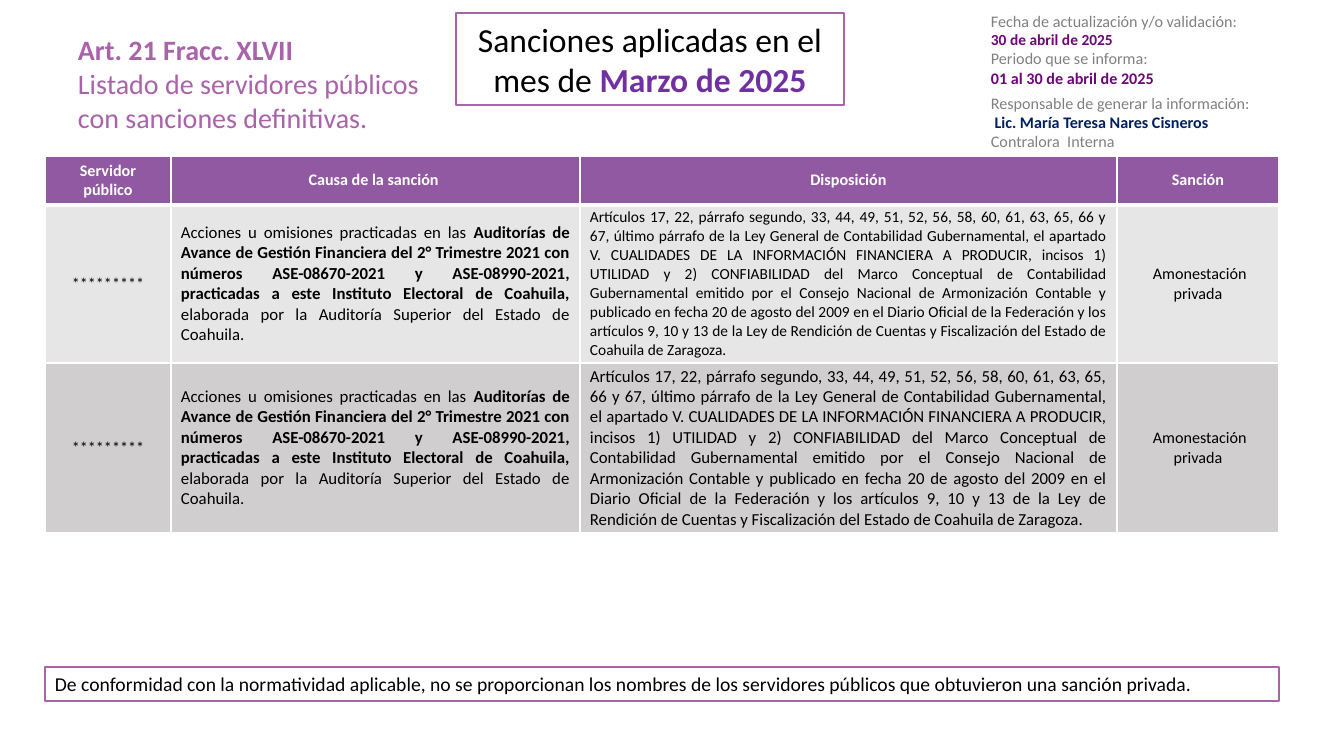
from dataclasses import dataclass
from typing import Any, NamedTuple

from lxml import etree
from pptx import Presentation
from pptx.dml.color import RGBColor
from pptx.enum.shapes import MSO_SHAPE
from pptx.enum.text import MSO_ANCHOR, MSO_AUTO_SIZE, PP_ALIGN
from pptx.oxml.ns import qn
from pptx.util import Emu, Pt

LEFT, CENTER, JUSTIFY = PP_ALIGN.LEFT, PP_ALIGN.CENTER, PP_ALIGN.JUSTIFY
TOP, MIDDLE = MSO_ANCHOR.TOP, MSO_ANCHOR.MIDDLE
RECT = MSO_SHAPE.RECTANGLE
FIXED = MSO_AUTO_SIZE.NONE

WIDE, HIGH = 1344, 756
SCALE = 12192000 / WIDE
FONT = "Calibri"
WHITE, BLACK, GRAY = "FFFFFF", "000000", "808080"
MAUVE, PURPLE, PLUM, NAVY = "A963A9", "7030A0", "6F0579", "002060"
HEAD, LIGHT, DARK = "9059A1", "E7E6E6", "D0CECE"


class Run(NamedTuple):
    text: str
    color: str = BLACK
    bold: bool = False


@dataclass
class Para:
    runs: list[Run]
    size: float
    align: PP_ALIGN = LEFT


@dataclass
class Box:
    left: int
    top: int
    width: int
    height: int
    paras: list[Para]


def px(num: int) -> Emu:
    return Emu(round(num * SCALE))


def rgb(code: str) -> RGBColor:
    return RGBColor.from_string(code)


def write(frame: Any, paras: list[Para]) -> None:
    for i, item in enumerate(paras):
        para = frame.add_paragraph() if i else frame.paragraphs[0]
        para.alignment = item.align
        para.font.name, para.font.size = FONT, Pt(item.size)
        for part in item.runs:
            run = para.add_run()
            run.text = part.text
            font = run.font
            font.name, font.size, font.bold = FONT, Pt(item.size), part.bold
            font.color.rgb = rgb(part.color)


def fill_box(shape: Any, box: Box, anchor: MSO_ANCHOR) -> None:
    frame = shape.text_frame
    frame.word_wrap = True
    frame.auto_size = FIXED
    frame.vertical_anchor = anchor
    write(frame, box.paras)


def spot(box: Box) -> list[Emu]:
    return [px(n) for n in (box.left, box.top, box.width, box.height)]


def frame_box(shape: Any) -> None:
    """Give a shape the white fill and mauve outline."""
    shape.fill.solid()
    shape.fill.fore_color.rgb = rgb(WHITE)
    shape.line.color.rgb = rgb(MAUVE)
    shape.line.width = Pt(1)


def edge(cell: Any, side: str, width: int) -> None:
    line = etree.SubElement(cell._tc.get_or_add_tcPr(), qn(f"a:ln{side}"), w=str(Pt(width)))
    solid = etree.SubElement(line, qn("a:solidFill"))
    etree.SubElement(solid, qn("a:srgbClr"), val=WHITE)


def fill_cell(cell: Any, para: Para, color: str, top: int, base: int) -> None:
    """Write a cell; top and base are its border widths in points."""
    for side, width in (("L", 1), ("R", 1), ("T", top), ("B", base)):
        edge(cell, side, width)
    cell.fill.solid()
    cell.fill.fore_color.rgb = rgb(color)
    cell.vertical_anchor = MIDDLE
    cell.margin_left = cell.margin_right = px(10)
    cell.margin_top = cell.margin_bottom = px(2)
    write(cell.text_frame, [para])


TITLE = Box(456, 13, 388, 92, [
    Para([Run("Sanciones aplicadas en el mes de "), Run("Marzo de 2025", PURPLE, True)], 24, CENTER),
])
NOTE = Box(45, 667, 1234, 34, [
    Para([Run("De conformidad con la normatividad aplicable, no se proporcionan los nombres "
              "de los servidores públicos que obtuvieron una sanción privada.")], 14),
])
TEXTS = [
    Box(68, 28, 388, 146, [
        Para([Run("Art. 21 Fracc. XLVII", MAUVE, True)], 20),
        Para([Run("Listado de servidores públicos con sanciones definitivas.", MAUVE)], 20),
    ]),
    Box(981, 6, 273, 107, [
        Para([Run("Fecha de actualización y/o validación:", GRAY)], 11.5),
        Para([Run("30 de abril de 2025", PLUM, True)], 11),
        Para([Run("Periodo que se informa:", GRAY)], 11.5),
        Para([Run("01 al 30 de abril de 2025", PLUM, True)], 11.5),
    ]),
    Box(981, 88, 298, 68, [
        Para([Run("Responsable de generar la información:", GRAY)], 11.5),
        Para([Run(" Lic. María Teresa Nares Cisneros", NAVY, True)], 11.5),
        Para([Run("Contralora  Interna", GRAY)], 11.5),
    ]),
]

COLS = [126, 409, 537, 162]
ROWS = [49, 158, 170]
HEADS = ["Servidor público", "Causa de la sanción ", "Disposición", "Sanción"]
CAUSE = [
    Run("Acciones u omisiones practicadas en las "),
    Run("Auditorías de Avance de Gestión Financiera del 2° Trimestre 2021 con números "
        "ASE-08670-2021 y ASE-08990-2021, practicadas a este Instituto Electoral de Coahuila, ",
        bold=True),
    Run("elaborada por la Auditoría Superior del Estado de Coahuila."),
]
RULE = Run(
    "Artículos 17, 22, párrafo segundo, 33, 44, 49, 51, 52, 56, 58, 60, 61, 63, 65, 66 y 67, "
    "último párrafo de la Ley General de Contabilidad Gubernamental, el apartado V. CUALIDADES "
    "DE LA INFORMACIÓN FINANCIERA A PRODUCIR, incisos 1) UTILIDAD y 2) CONFIABILIDAD del Marco "
    "Conceptual de Contabilidad Gubernamental emitido por el Consejo Nacional de Armonización "
    "Contable y publicado en fecha 20 de agosto del 2009 en el Diario Oficial de la Federación "
    "y los artículos 9, 10 y 13 de la Ley de Rendición de Cuentas y Fiscalización del Estado "
    "de Coahuila de Zaragoza.")


def case(size: int) -> list[Para]:
    """Cells of one sanction, with the size of its legal text."""
    return [
        Para([Run("*********")], 11.5, CENTER),
        Para(CAUSE, 12, JUSTIFY),
        Para([RULE], size, JUSTIFY),
        Para([Run(" Amonestación privada")], 11.5, CENTER),
    ]


def add_grid(slide: Any) -> None:
    grid = slide.shapes.add_table(
        len(ROWS), len(COLS), px(45), px(156), px(sum(COLS)), px(sum(ROWS))).table
    for col, width in zip(grid.columns, COLS):
        col.width = px(width)
    for row, height in zip(grid.rows, ROWS):
        row.height = px(height)
    heads = [Para([Run(text, WHITE, True)], 11.5, CENTER) for text in HEADS]
    lines = [(heads, HEAD, 1, 3), (case(11), LIGHT, 3, 1), (case(12), DARK, 1, 1)]
    for r, (paras, color, top, base) in enumerate(lines):
        for c, para in enumerate(paras):
            fill_cell(grid.cell(r, c), para, color, top, base)


def main() -> None:
    deck = Presentation()
    deck.slide_width, deck.slide_height = px(WIDE), px(HIGH)
    slide = deck.slides.add_slide(deck.slide_layouts[5])
    title = slide.shapes.title
    title.left, title.top, title.width, title.height = spot(TITLE)
    frame_box(title)
    fill_box(title, TITLE, MIDDLE)
    for box in TEXTS:
        fill_box(slide.shapes.add_textbox(*spot(box)), box, TOP)
    note = slide.shapes.add_shape(RECT, *spot(NOTE))
    note.shadow.inherit = False
    frame_box(note)
    fill_box(note, NOTE, MIDDLE)
    add_grid(slide)
    deck.save("out.pptx")


if __name__ == "__main__":
    main()
